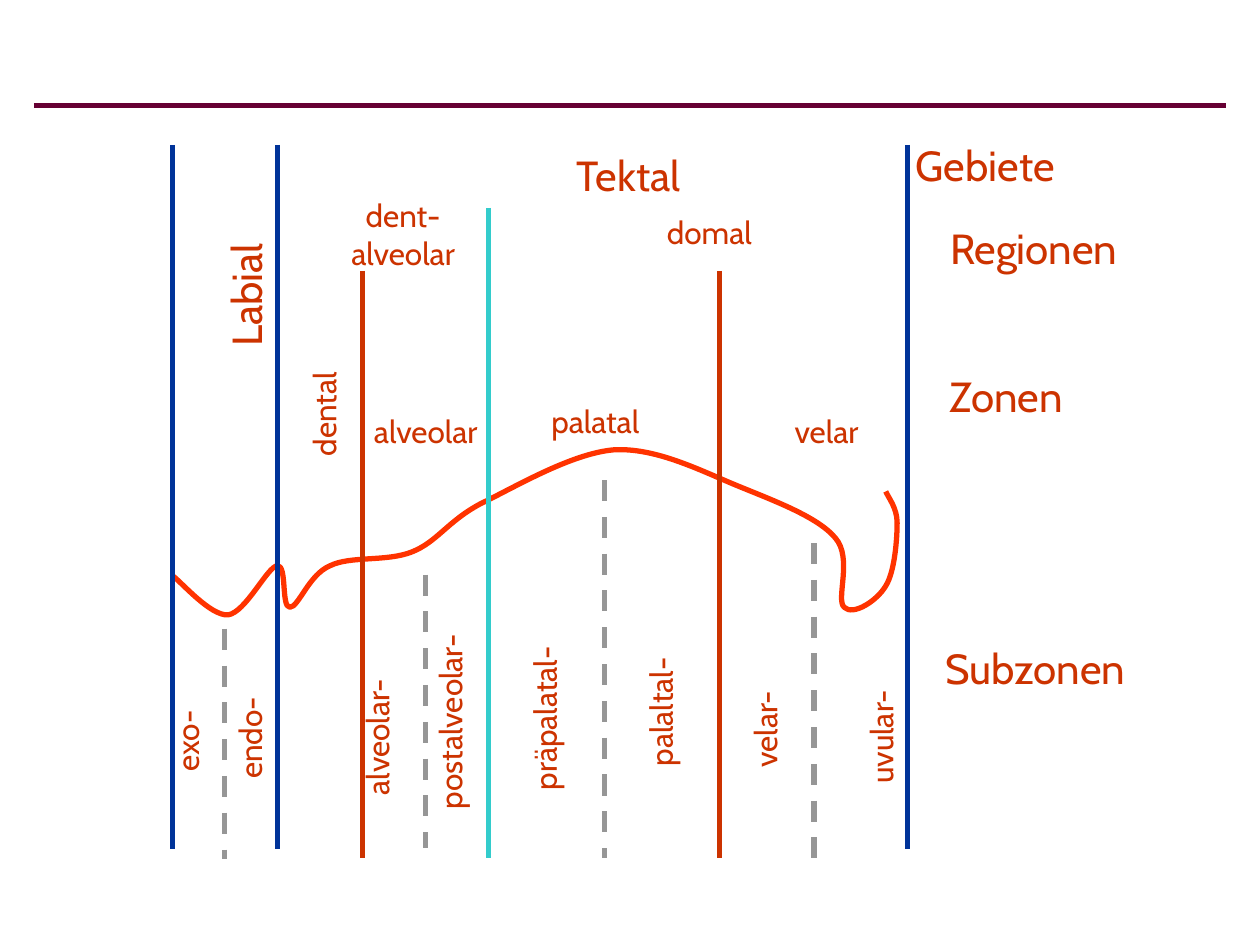
"""Draws the zones of articulation along the palate as one slide."""
from lxml import etree
from pptx import Presentation
from pptx.dml.color import RGBColor
from pptx.enum import dml, shapes, text
from pptx.oxml.ns import qn
from pptx.util import Inches, Pt

theme = {
    "font": "Cabin", "ink": "CC3300", "rule": "660033", "curve": "FF3300",
    "area": "003399", "region": "33CCCC", "zone": "CC3300", "sub": "969696",
    "big": 24, "small": 18, "line": 3,
}

deck = Presentation()
deck.slide_width, deck.slide_height = Inches(10), Inches(7.5)
cell = deck.slide_width // 1000  # 1000 columns by 750 rows
slide = deck.slides.add_slide(deck.slide_layouts[6])


def label(home, words, size, x, y, w, h, turn=False, inset=None):
    box = home.shapes.add_textbox(*(n * cell for n in (x, y, w, h)))
    frame = box.text_frame
    form = {"word_wrap": False, "auto_size": text.MSO_AUTO_SIZE.SHAPE_TO_FIT_TEXT}
    if inset is not None:
        form |= {f"margin_{side}": inset for side in ("left", "top", "right", "bottom")}
    for key, value in form.items():
        setattr(frame, key, value)
    if turn:
        box.rotation = 180
        frame._txBody.bodyPr.set("vert", "eaVert")
    frame.text = words
    for para in frame.paragraphs:
        para.alignment = text.PP_ALIGN.CENTER
        for key, value in {"name": theme["font"], "size": Pt(theme[size])}.items():
            setattr(para.font, key, value)
        para.font.color.rgb = RGBColor.from_string(theme["ink"])


def rule(home, tone, x1, y1, x2, y2, dash=None):
    line = home.shapes.add_connector(
        shapes.MSO_CONNECTOR.STRAIGHT, *(n * cell for n in (x1, y1, x2, y2)))
    line.line.color.rgb = RGBColor.from_string(theme[tone])
    for key, value in {"width": Pt(theme["line"]), "dash_style": dash}.items():
        setattr(line.line, key, value)
    etree.SubElement(line._element.spPr, qn("a:effectLst"))


rule(slide, "rule", 27, 84, 973, 84)

label(slide, "Labial", "big", 170, 190, 60, 95, turn=True)
label(slide, "Tektal", "big", 444, 114, 110, 50)
label(slide, "dent-\nalveolar", "small", 277, 156, 86, 60, inset=0)
label(slide, "dental", "small", 237, 294, 50, 78, turn=True)

for words, x, y, w in (
    ("domal", 519, 164, 88), ("alveolar", 285, 322, 106),
    ("palatal", 426, 314, 93), ("velar", 619, 322, 74),
):
    label(slide, words, "small", x, y, w, 40)

for words, x, y, h in (
    ("exo-", 128, 564, 58), ("endo-", 178, 554, 74),
    ("alveolar-", 279, 536, 105), ("postalveolar-", 337, 500, 152),
    ("präpalatal-", 412, 509, 128), ("palaltal-", 504, 520, 98),
    ("velar-", 587, 546, 73), ("uvular-", 679, 545, 87),
):
    label(slide, words, "small", x, y, 50, h, turn=True)

start = (137, 457)
bends = (
    ((144, 462), (167, 489), (181, 488)), ((195, 486), (212, 450), (220, 449)),
    ((228, 448), (223, 482), (230, 482)), ((237, 482), (245, 456), (262, 449)),
    ((278, 441), (307, 446), (327, 438)), ((347, 430), (355, 414), (381, 400)),
    ((408, 387), (453, 360), (487, 357)), ((520, 355), (555, 373), (584, 385)),
    ((613, 397), (649, 410), (663, 427)), ((677, 443), (663, 476), (670, 482)),
    ((677, 489), (696, 477), (703, 465)), ((710, 454), (712, 428), (712, 415)),
    ((712, 403), (705, 395), (703, 390)),
)
knots = [bend[-1] for bend in bends]
pen = slide.shapes.build_freeform(*start, scale=cell)
pen.add_line_segments(knots, close=False)
palate = pen.convert_to_shape()
palate.shadow.inherit = False
palate.fill.background()
palate.line.color.rgb = RGBColor.from_string(theme["curve"])
palate.line.width = Pt(theme["line"])
left, top = (min(axis) for axis in zip(start, *knots))
steps = list(palate._element.iter(qn("a:lnTo")))
for step, bend in zip(steps, bends):
    step.tag = qn("a:cubicBezTo")
    step.clear()
    for x, y in bend:
        etree.SubElement(step, qn("a:pt"), x=str(x - left), y=str(y - top))

dash = dml.MSO_LINE.DASH
levels = (
    ("Gebiete", (716, 106, 132, 50), "area", None,
     ((137, 115, 674), (220, 115, 674), (720, 115, 674))),
    ("Regionen", (742, 172, 157, 50), "region", None, ((388, 165, 681),)),
    ("Zonen", (743, 289, 111, 50), "zone", None,
     ((288, 215, 681), (571, 215, 681))),
    ("Subzonen", (740, 505, 163, 50), "sub", dash,
     ((178, 499, 682), (338, 456, 673), (480, 381, 681), (646, 431, 681))),
)
for words, spot, tone, style, marks in levels:
    group = slide.shapes.add_group_shape()
    for x, y1, y2 in marks:
        rule(group, tone, x, y1, x, y2, style)
    label(group, words, "big", *spot)

deck.save("out.pptx")
